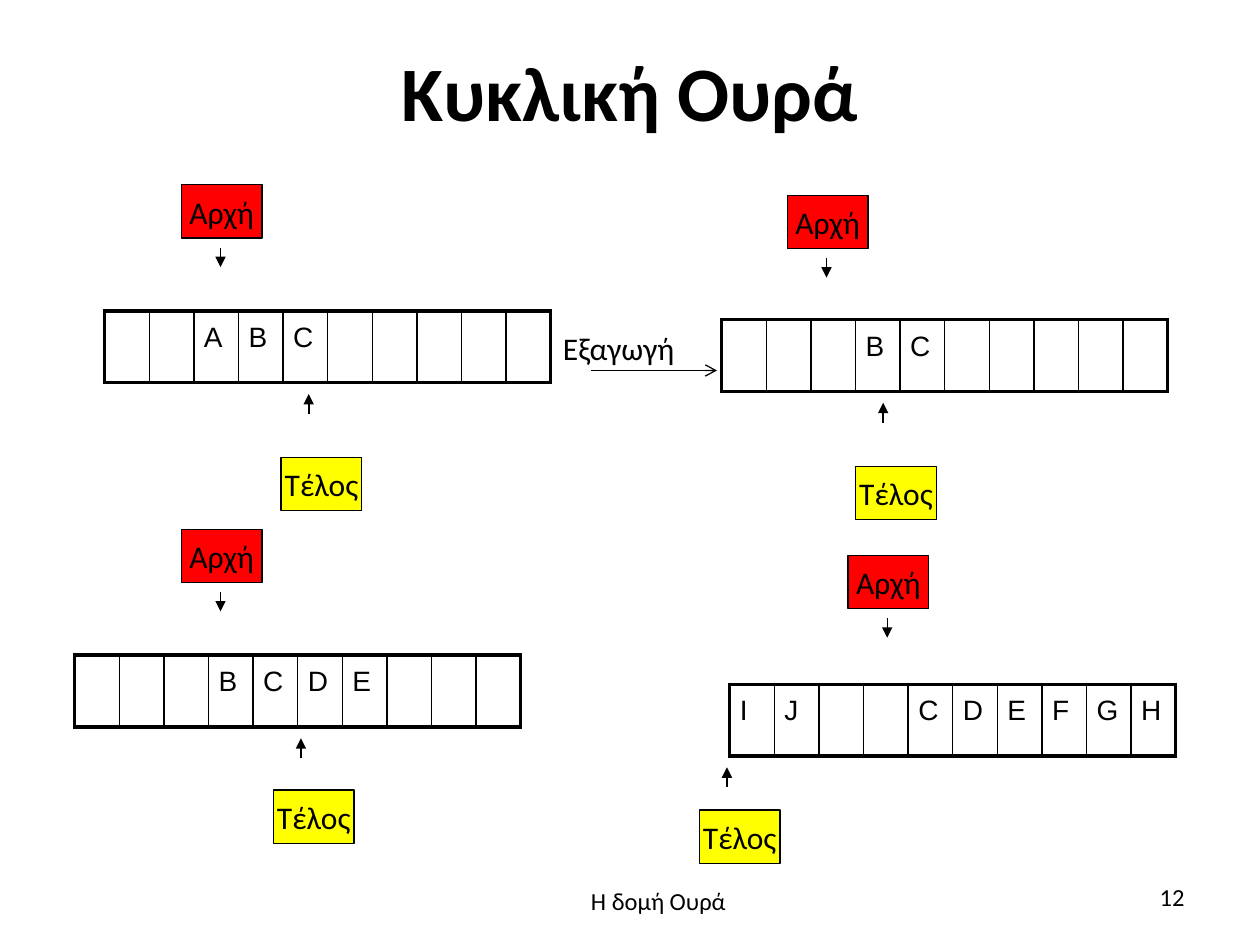
import pptx
import pptx.util
import pptx.dml.color
import pptx.enum.shapes
import pptx.enum.text
import pptx.oxml.ns
from lxml import etree

Pt = pptx.util.Pt
qn = pptx.oxml.ns.qn
ALIGN = pptx.enum.text.PP_ALIGN
MIDDLE = pptx.enum.text.MSO_ANCHOR.MIDDLE
BLACK, RED, YELLOW = "000000", "FF0000", "FFFF00"

QUEUES = [
    {"cells": "  ABC     ", "at": (59.8, 177.7), "head": (103.6, 105.6), "tail": (160.6, 261.4)},
    {"cells": "   BC     ", "at": (412.4, 182.7), "head": (449.9, 111.6), "tail": (488.9, 266.4)},
    {"cells": "   BCDE   ", "at": (42.7, 374.4), "head": (103.6, 302.4), "tail": (156.2, 451.4)},
    {"cells": "IJ  CDEFGH", "at": (417, 391), "head": (484.6, 317.4), "tail": (399.6, 462.8)},
]
TEXTS = [
    ("Κυκλική Ουρά", (2.9, -7.9, 714.2, 121.7), 44, True, ALIGN.CENTER),
    ("Η δομή Ουρά", (250.6, 502.6, 251.3, 39.6), 14, False, ALIGN.CENTER),
    ("12", (516.2, 500.4, 167.8, 28.8), 14, False, ALIGN.RIGHT),
    ("Εξαγωγή", (314.6, 184.3, 89.3, 28.8), 18, False, ALIGN.LEFT),
]
CELL_W, CELL_H = 25.5, 41
BOX_W, BOX_H = 46.2, 30.5


def rgb(value):
    return pptx.dml.color.RGBColor.from_string(value)


def style(p, size, font="Calibri", bold=False, align=ALIGN.LEFT):
    p.alignment = align
    for r in p.runs:
        r.font.size = Pt(size)
        r.font.name = font
        r.font.bold = bold
        r.font.color.rgb = rgb(BLACK)


def add_text(s, text, box, size, bold, align):
    tf = s.shapes.add_textbox(*map(Pt, box)).text_frame
    tf.word_wrap = True
    tf.text = text
    style(tf.paragraphs[0], size, bold=bold, align=align)
    return tf


def add_label(s, text, at, fill):
    sp = s.shapes.add_shape(pptx.enum.shapes.MSO_SHAPE.RECTANGLE,
                            *map(Pt, (*at, BOX_W, BOX_H)))
    sp.shadow.inherit = False
    sp.fill.solid()
    sp.fill.fore_color.rgb = rgb(fill)
    sp.line.color.rgb = rgb(BLACK)
    sp.line.width = Pt(0.75)
    tf = sp.text_frame
    tf.word_wrap = False
    tf.vertical_anchor = MIDDLE
    tf.text = text
    style(tf.paragraphs[0], 18, align=ALIGN.CENTER)


def add_arrow(s, x1, y1, x2, y2, width=0.75, end="triangle"):
    sp = s.shapes.add_connector(pptx.enum.shapes.MSO_CONNECTOR.STRAIGHT,
                                *map(Pt, (x1, y1, x2, y2)))
    sp.line.color.rgb = rgb(BLACK)
    sp.line.width = Pt(width)
    etree.SubElement(sp.line._ln, qn("a:tailEnd"), type=end)
    etree.SubElement(sp._element.spPr, qn("a:effectLst"))


def set_borders(cell, widths):
    tcPr = cell._tc.get_or_add_tcPr()
    for i, (side, width) in enumerate(zip("LRTB", widths)):
        ln = etree.Element(qn(f"a:ln{side}"), w=str(Pt(width)))
        fill = etree.SubElement(ln, qn("a:solidFill"))
        etree.SubElement(fill, qn("a:srgbClr"), val=BLACK)
        tcPr.insert(i, ln)


def add_queue(s, letters, at):
    n = len(letters)
    tbl = s.shapes.add_table(1, n, *map(Pt, (*at, n * CELL_W, CELL_H))).table
    tbl.first_row = tbl.horz_banding = False
    tbl.rows[0].height = Pt(CELL_H)
    for i, letter in enumerate(letters):
        tbl.columns[i].width = Pt(CELL_W)
        cell = tbl.cell(0, i)
        cell.fill.background()
        cell.margin_left = cell.margin_right = Pt(5.8)
        cell.margin_top = cell.margin_bottom = Pt(2.9)
        set_borders(cell, (2.25 if i == 0 else 1, 2.25 if i == n - 1 else 1, 2.25, 2.25))
        if letter.strip():
            p = cell.text_frame.paragraphs[0]
            p.text = letter
            p.line_spacing = 1.2
            p._p.get_or_add_pPr().get_or_add_spcBef().set_spcPct(0.5)
            style(p, 16, "Arial")


def main():
    prs = pptx.Presentation()
    prs.slide_width, prs.slide_height = Pt(720), Pt(540)
    s = prs.slides.add_slide(prs.slide_layouts[6])

    title, *_ = [add_text(s, *text) for text in TEXTS]
    title.vertical_anchor = MIDDLE
    title.margin_left = title.margin_right = title.margin_bottom = 0
    title.margin_top = Pt(1.4)
    title.paragraphs[0].line_spacing = 0.98

    for queue in QUEUES:
        add_queue(s, queue["cells"], queue["at"])
        x, y = queue["head"]
        add_label(s, "Αρχή", (x, y), RED)
        add_arrow(s, x + 22.4, y + 36, x + 22.4, y + 47)
        x, y = queue["tail"]
        add_label(s, "Τέλος", (x, y), YELLOW)
        bottom = queue["at"][1] + CELL_H
        add_arrow(s, x + 15.8, bottom + 17.8, x + 15.8, bottom + 6.5, 1)

    add_arrow(s, 337.7, 211.7, 409.7, 211.7, end="arrow")
    prs.save("out.pptx")


if __name__ == "__main__":
    main()
